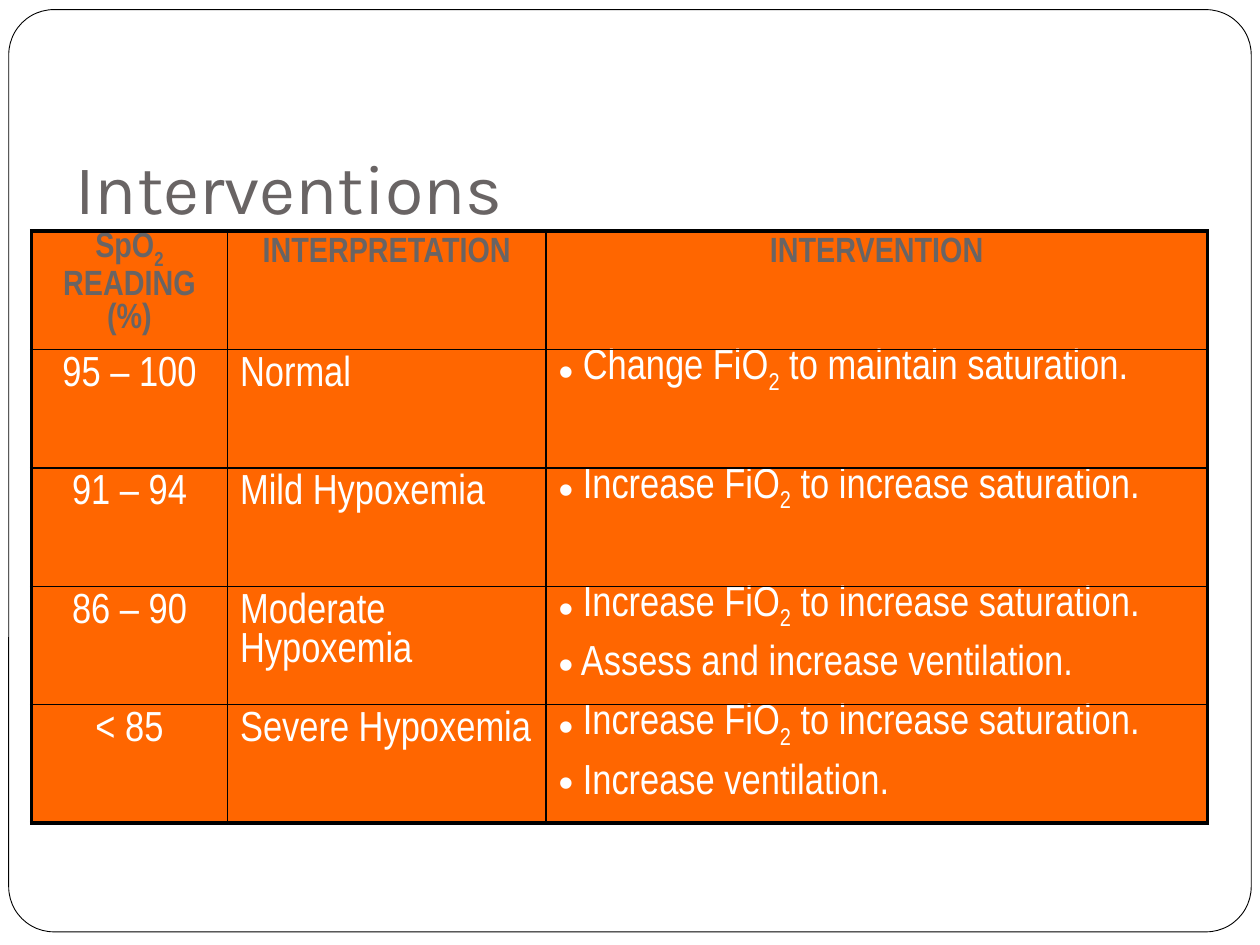
from lxml import etree
from pptx import Presentation
from pptx import util as u
from pptx.dml import color
from pptx.enum import shapes, text
from pptx.oxml import ns

# Content: |...| marks a subscript, each cell is a list of paragraphs
TITLE = "Interventions"
HEADERS = ["SpO|2| READING (%)", "INTERPRETATION", "INTERVENTION"]
INCREASE = " Increase FiO|2| to increase saturation."
READINGS = [
    ("95 – 100", "Normal", [" Change FiO|2| to maintain saturation."]),
    ("91 – 94", "Mild Hypoxemia", [INCREASE]),
    ("86 – 90", "Moderate Hypoxemia", [INCREASE, " Assess and increase ventilation."]),
    ("< 85", "Severe Hypoxemia", [INCREASE, " Increase ventilation."]),
]

THEME = {
    "paper": "FFFFFF", "ink": "000000", "grey": "696464", "orange": "FF6600",
    "title_font": "Karla", "table_font": "Arial Narrow",
    "title_size": 40, "header_size": 20, "body_size": 24,
    "thin": 1, "thick": 2.25,
    "leading": 0.94, "paragraph_gap": 7.4,
}
COLUMNS = [112, 182, 378]
ROW_HEIGHT = 67.68
TABLE_LEFT, TABLE_TOP = 18, 132


def rgb(name):
    return color.RGBColor.from_string(THEME[name])


def add_child(parent, tag, **attributes):
    return etree.SubElement(parent, ns.qn(tag), attributes)


def write(frame, paragraphs, font, size, ink, bold=False, centred=False,
          bullet=False, leading=None):
    for index, line in enumerate(paragraphs):
        para = frame.paragraphs[0] if index == 0 else frame.add_paragraph()
        para.alignment = text.PP_ALIGN.CENTER if centred else text.PP_ALIGN.LEFT
        if leading:
            para.line_spacing = u.Pt(THEME[size] * leading)
        if index:
            para.space_before = u.Pt(THEME["paragraph_gap"])
        if bullet:
            layout = para._p.get_or_add_pPr()
            layout.set("marL", "0")
            layout.set("indent", "0")
            add_child(layout, "a:buFont", typeface="Arial")
            add_child(layout, "a:buChar", char="•")
        for part, words in enumerate(line.split("|")):
            span = para.add_run()
            span.text = words
            span.font.name = THEME[font]
            span.font.size = u.Pt(THEME[size])
            span.font.bold = bold
            span.font.color.rgb = rgb(ink)
            if part % 2:
                span.font._element.set("baseline", "-25000")


def set_borders(cell, outer_sides):
    """Thick lines on the table's outer edge, thin lines inside."""
    properties = cell._tc.get_or_add_tcPr()
    for position, side in enumerate("LRTB"):
        width = THEME["thick" if side in outer_sides else "thin"]
        line = etree.Element(ns.qn(f"a:ln{side}"), {"w": str(u.Pt(width))})
        add_child(add_child(line, "a:solidFill"), "a:srgbClr", val=THEME["ink"])
        properties.insert(position, line)


def add_readings_table(page):
    rows = [[[header] for header in HEADERS]]
    rows += [[[reading], [meaning], actions] for reading, meaning, actions in READINGS]
    table = page.shapes.add_table(
        len(rows), len(COLUMNS), u.Pt(TABLE_LEFT), u.Pt(TABLE_TOP),
        u.Pt(sum(COLUMNS)), u.Pt(ROW_HEIGHT * len(rows))).table
    table.horz_banding = False
    for column, width in zip(table.columns, COLUMNS):
        column.width = u.Pt(width)
    last_row, last_column = len(rows) - 1, len(COLUMNS) - 1

    for r, row in enumerate(rows):
        table.rows[r].height = u.Pt(ROW_HEIGHT)
        header = r == 0
        for c, paragraphs in enumerate(row):
            cell = table.cell(r, c)
            cell.margin_bottom = 0
            cell.fill.solid()
            cell.fill.fore_color.rgb = rgb("orange")
            edges = {"L": c == 0, "R": c == last_column, "T": header, "B": r == last_row}
            set_borders(cell, [side for side, outer in edges.items() if outer])
            write(cell.text_frame, paragraphs, font="table_font",
                  size="header_size" if header else "body_size",
                  ink="grey" if header else "paper", bold=header,
                  centred=header or c == 0,
                  bullet=not header and c == last_column, leading=THEME["leading"])


def main():
    deck = Presentation()
    deck.slide_width, deck.slide_height = u.Pt(720), u.Pt(540)
    page = deck.slides.add_slide(deck.slide_layouts[6])

    # Rounded frame
    frame = page.shapes.add_shape(shapes.MSO_SHAPE.ROUNDED_RECTANGLE,
                                  u.Pt(5), u.Pt(5.5), u.Pt(710), u.Pt(527))
    frame.adjustments[0] = 0.049
    frame.shadow.inherit = False
    frame.fill.solid()
    frame.fill.fore_color.rgb = rgb("paper")
    frame.line.color.rgb = rgb("ink")
    frame.line.width = u.Pt(0.5)

    # Title
    box = page.shapes.add_textbox(u.Pt(36), u.Pt(48), u.Pt(648), u.Pt(90))
    box.text_frame.word_wrap = True
    box.text_frame.vertical_anchor = text.MSO_ANCHOR.BOTTOM
    box.text_frame.margin_bottom = u.Pt(7.2)
    write(box.text_frame, [TITLE], font="title_font", size="title_size", ink="grey")

    # Table
    add_readings_table(page)
    deck.save("out.pptx")


if __name__ == "__main__":
    main()
